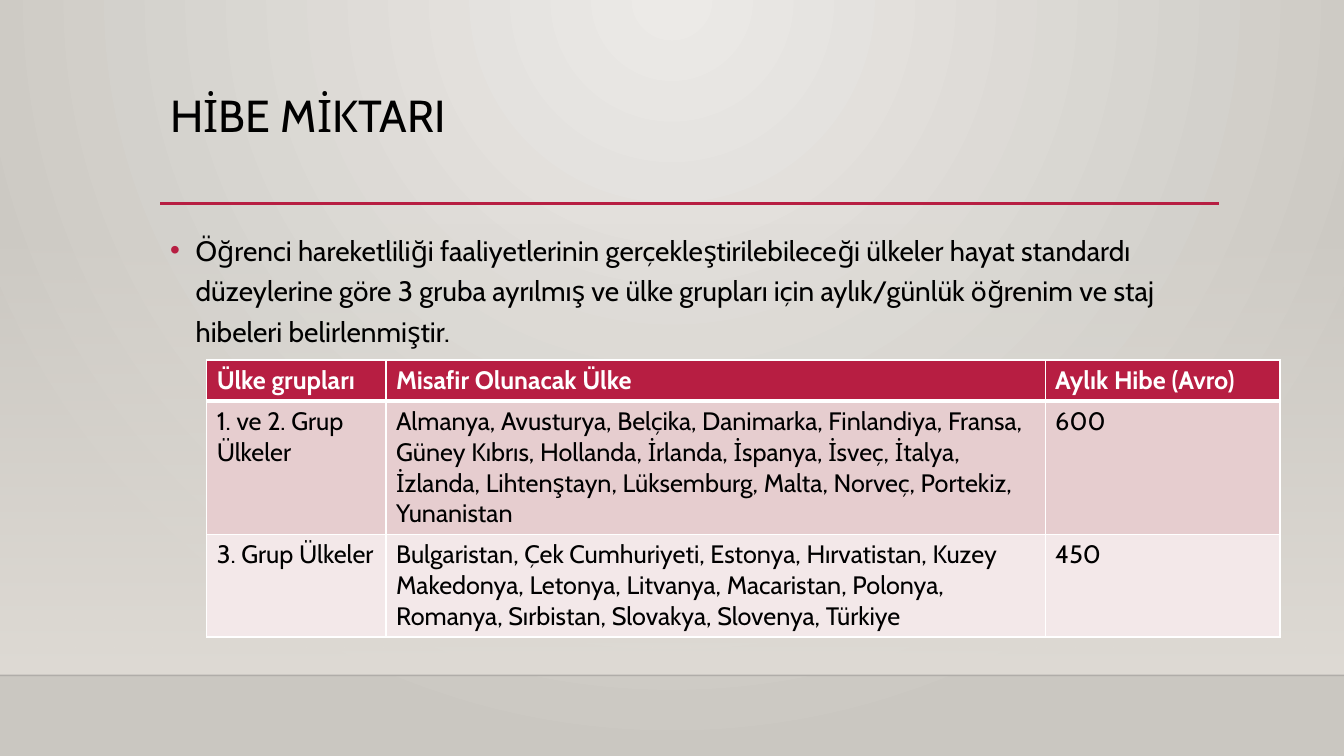
"""Build the slide on grant amounts by country group."""
from pptx import Presentation
from pptx.dml.color import RGBColor
from pptx.enum.shapes import MSO_CONNECTOR as Link, MSO_SHAPE as Shape
from pptx.enum.text import MSO_ANCHOR as Anchor
from pptx.oxml import parse_xml as to_xml
from pptx.oxml.ns import nsdecls, qn
from pptx.util import Cm, Pt
from lxml.etree import SubElement as Sub

RED = RGBColor(0xB7, 0x1E, 0x42)
ROSE = RGBColor(0xE6, 0xCD, 0xCF)
PALE = RGBColor(0xF3, 0xE8, 0xE9)
LIGHT = RGBColor(0xEC, 0xEA, 0xE7)
DARK = RGBColor(0xCA, 0xC7, 0xC1)
SAND = RGBColor(0xDF, 0xDB, 0xD5)
INK = RGBColor(0, 0, 1)
BLACK = RGBColor(0, 0, 0)
WHITE = RGBColor(255, 255, 255)
FONT = "Cabin"
LEFT, WIDE = Cm(4.04), Cm(26.67)


def blend(first, last, alpha, way):
    """Return a two-stop gradient fill."""
    return to_xml(
        f'<a:gradFill {nsdecls("a")} rotWithShape="1"><a:gsLst>'
        f'<a:gs pos="0"><a:srgbClr val="{first}"><a:alpha val="{alpha}"/></a:srgbClr></a:gs>'
        f'<a:gs pos="100000"><a:srgbClr val="{last}"/></a:gs>'
        f'</a:gsLst>{way}</a:gradFill>')


def write(para, text, size, color, bold=False):
    """Add one styled run to a paragraph."""
    run = para.add_run()
    run.text = text
    font = run.font
    font.name, font.size, font.bold = FONT, Pt(size), bold
    font.color.rgb = color


deck = Presentation()
deck.slide_width, deck.slide_height = Cm(33.87), Cm(19.05)
slide = deck.slides.add_slide(deck.slide_layouts[6])
shapes = slide.shapes

slide.background.fill.solid()
solid = next(slide.element.iter(qn("a:solidFill")))
ring = ('<a:path path="circle"><a:fillToRect l="43000" t="0" r="43000" '
        'b="100000"/></a:path>')
solid.getparent().replace(solid, blend(LIGHT, DARK, 100000, ring))

veil = shapes.add_shape(Shape.RECTANGLE, 0, Cm(5.61), deck.slide_width, Cm(11.41))
veil.shadow.inherit = False
veil.line.fill.background()
veil.fill.solid()
solid = veil.element.spPr.find(qn("a:solidFill"))
solid.getparent().replace(
    solid, blend(SAND, SAND, 0, '<a:lin ang="5400000" scaled="0"/>'))

for start, end, top, color, width, alpha in [
        (0, 33.87, 17.02, INK, 1, 20000),
        (4.04, 30.73, 5.13, RED, 2.5, 100000)]:
    rule = shapes.add_connector(Link.STRAIGHT, Cm(start), Cm(top), Cm(end), Cm(top))
    rule.line.color.rgb = color
    rule.line.width = Pt(width)
    tint = next(rule.element.spPr.iter(qn("a:srgbClr")))
    Sub(tint, qn("a:alpha"), val=str(alpha))
    Sub(rule.element.spPr, qn("a:effectLst"))

title = shapes.add_textbox(LEFT, Cm(2.24), WIDE, Cm(2.92)).text_frame
title.word_wrap = True
title.vertical_anchor = Anchor.TOP
para = title.paragraphs[0]
para.line_spacing = 0.9
write(para, "HİBE MİKTARI", 32, BLACK)

body = shapes.add_textbox(LEFT, Cm(5.59), WIDE, Cm(9.58)).text_frame
body.word_wrap = True
para = body.paragraphs[0]
para.line_spacing = 1.2
props = para._p.get_or_add_pPr()
props.set("marL", str(Cm(0.64)))
props.set("indent", str(-Cm(0.64)))
Sub(Sub(props, qn("a:buClr")), qn("a:srgbClr"), val=str(RED))
Sub(props, qn("a:buFont"), typeface="Arial")
Sub(props, qn("a:buChar"), char="•")
write(para, "Öğrenci hareketliliği faaliyetlerinin gerçekleştirilebileceği "
      "ülkeler hayat standardı düzeylerine göre 3 gruba ayrılmış ve ülke "
      "grupları için aylık/günlük öğrenim ve staj hibeleri belirlenmiştir.",
      20, BLACK)

rows = [
    ("Ülke grupları", "Misafir Olunacak Ülke", "Aylık Hibe (Avro)"),
    ("1. ve 2. Grup Ülkeler",
     "Almanya, Avusturya, Belçika, Danimarka, Finlandiya, Fransa, Güney Kıbrıs, "
     "Hollanda, İrlanda, İspanya, İsveç, İtalya, İzlanda, Lihtenştayn, "
     "Lüksemburg, Malta, Norveç, Portekiz, Yunanistan", "600"),
    ("3. Grup Ülkeler",
     "Bulgaristan, Çek Cumhuriyeti, Estonya, Hırvatistan, Kuzey Makedonya, "
     "Letonya, Litvanya, Macaristan, Polonya, Romanya, Sırbistan, Slovakya, "
     "Slovenya, Türkiye", "450"),
]
fills = [RED, ROSE, PALE]
table = shapes.add_table(3, 3, Cm(5.21), Cm(9.07), Cm(27.05), Cm(6.98)).table
for col, width in zip(table.columns, [4.52, 16.61, 5.92]):
    col.width = Cm(width)
for row, height in zip(table.rows, [1.04, 3.35, 2.59]):
    row.height = Cm(height)

for r, texts in enumerate(rows):
    head = r == 0
    for c, text in enumerate(texts):
        cell = table.cell(r, c)
        props = cell._tc.get_or_add_tcPr()
        for side in "LRTB":
            thick = (head and side == "B") or (r == 1 and side == "T")
            edge = Sub(props, qn(f"a:ln{side}"), w=str(Pt(3 if thick else 1)))
            Sub(Sub(edge, qn("a:solidFill")), qn("a:srgbClr"), val=str(WHITE))
        cell.fill.solid()
        cell.fill.fore_color.rgb = fills[r]
        write(cell.text_frame.paragraphs[0], text, 18, WHITE if head else BLACK, head)

deck.save("out.pptx")
